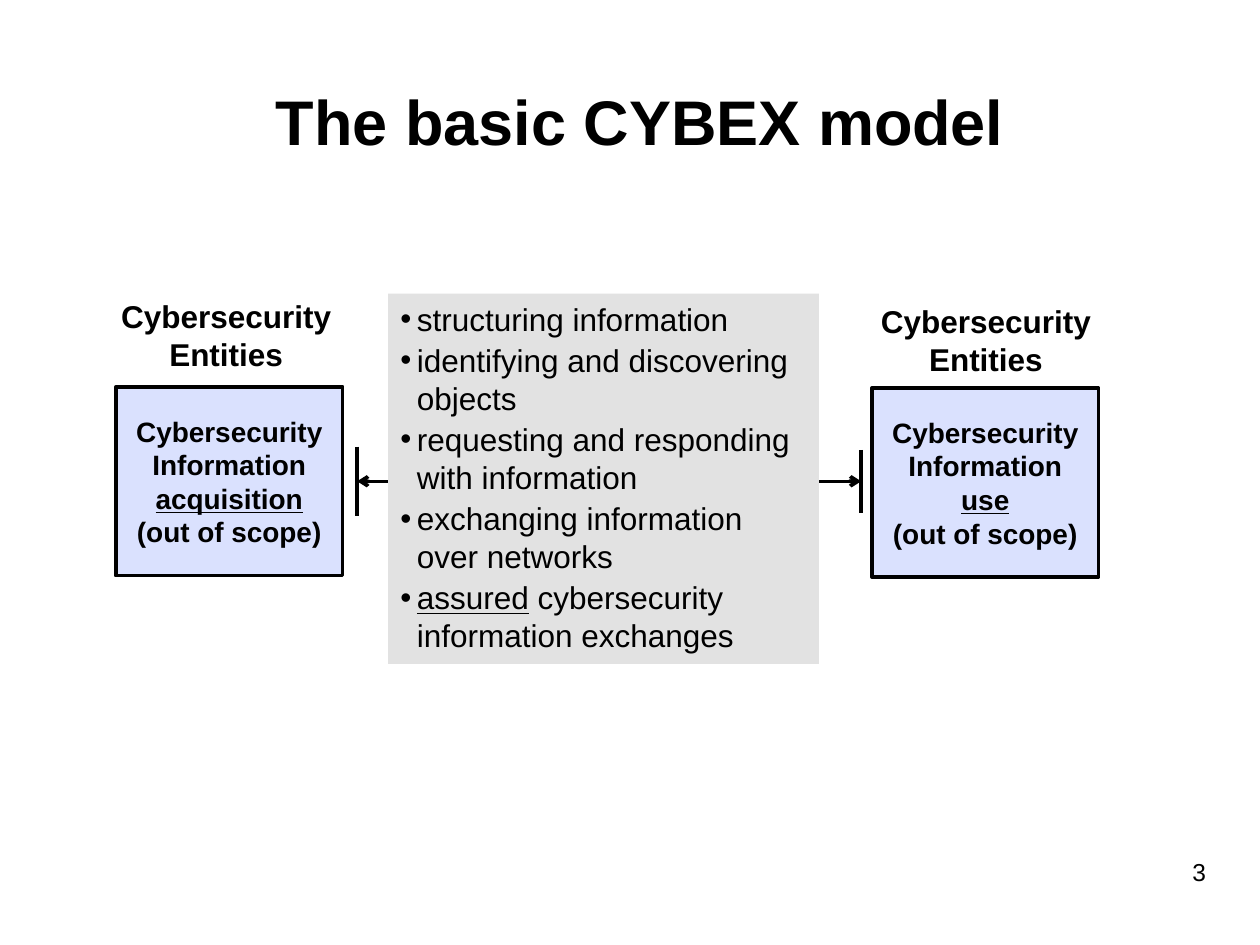
from lxml import etree
from pptx import Presentation
from pptx.dml.color import RGBColor
from pptx.enum import shapes, text
from pptx.oxml.ns import qn
from pptx.util import Inches, Pt

# Grid: 100 columns by 75 rows on a 10 x 7.5 inch slide
COLS, ROWS = 100, 75
WIDTH, HEIGHT = Inches(10), Inches(7.5)
COLORS = {"ink": "000000", "entity": "DAE1FE", "exchange": "E2E2E2"}
FONT = "Arial"
ALIGN, ANCHOR = text.PP_ALIGN, text.MSO_ANCHOR


def rgb(name):
    return RGBColor.from_string(COLORS[name])


def x(cols):
    return round(WIDTH * cols / COLS)


def y(rows):
    return round(HEIGHT * rows / ROWS)


def place(box):
    left, top, width, height = box
    return x(left), y(top), x(width), y(height)


def add_bullet(paragraph, indent):
    props = paragraph._p.get_or_add_pPr()
    props.set("marL", str(indent))
    props.set("indent", str(-indent))
    etree.SubElement(props, qn("a:buFont"), typeface=FONT)
    etree.SubElement(props, qn("a:buChar"), char="•")


def write(shape, paragraphs, size=18, bold=False, align=ALIGN.LEFT,
          anchor=ANCHOR.TOP, wrap=True, bullet_indent=None, gap=0):
    """Fill a shape; words between underscores are underlined."""
    frame = shape.text_frame
    frame.word_wrap = wrap
    frame.vertical_anchor = anchor
    for index, content in enumerate(paragraphs):
        paragraph = frame.add_paragraph() if index else frame.paragraphs[0]
        paragraph.alignment = align
        if index and gap:
            paragraph.space_before = Pt(gap)
        if bullet_indent:
            add_bullet(paragraph, bullet_indent)
        font = paragraph.font
        font.size, font.bold, font.name = Pt(size), bold, FONT
        font.color.rgb = rgb("ink")
        for part, piece in enumerate(content.split("_")):
            for number, line in enumerate(piece.split("\n")):
                if number:
                    paragraph.add_line_break()
                if line:
                    run = paragraph.add_run()
                    run.text = line
                    run.font.size, run.font.bold = Pt(size), bold
                    run.font.name = FONT
                    run.font.color.rgb = rgb("ink")
                    run.font.underline = part % 2 == 1


def add_text(slide, box, paragraphs, **style):
    write(slide.shapes.add_textbox(*place(box)), paragraphs, **style)


def add_panel(slide, box, fill, outlined=False):
    panel = slide.shapes.add_shape(shapes.MSO_SHAPE.RECTANGLE, *place(box))
    panel.shadow.inherit = False
    panel.fill.solid()
    panel.fill.fore_color.rgb = rgb(fill)
    if outlined:
        panel.line.color.rgb = rgb("ink")
        panel.line.width = Pt(2)
    else:
        panel.line.fill.background()
    return panel


def add_line(slide, start, end, arrows=False):
    line = slide.shapes.add_connector(
        shapes.MSO_CONNECTOR.STRAIGHT,
        x(start[0]), y(start[1]), x(end[0]), y(end[1]))
    line.line.color.rgb = rgb("ink")
    line.line.width = Pt(2)
    if arrows:
        outline = line.line._get_or_add_ln()
        for end_tag in ("a:headEnd", "a:tailEnd"):
            etree.SubElement(outline, qn(end_tag), type="arrow")
    etree.SubElement(line._element.spPr, qn("a:effectLst"))


def entity(slide, box, role, label_offset):
    """An outlined card with its heading placed relative to its corner."""
    left, top = box[:2]
    card = add_panel(slide, box, "entity", outlined=True)
    write(card, [f"Cybersecurity\nInformation\n_{role}_\n(out of scope)"],
          size=16, bold=True, align=ALIGN.CENTER, anchor=ANCHOR.MIDDLE)
    label_box = (left + label_offset[0], top + label_offset[1], 19.5, 7.1)
    add_text(slide, label_box, ["Cybersecurity", "Entities"],
             bold=True, align=ALIGN.CENTER, wrap=False)


def link(slide, box, bar_heights):
    """A two-way arrow stopped by an upright bar at each end."""
    left, top, width, height = box
    middle = top + height / 2
    add_line(slide, (left, middle), (left + width, middle), arrows=True)
    for column, bar in zip((left, left + width), bar_heights):
        add_line(slide, (column, middle - bar / 2), (column, middle + bar / 2))


def exchange(slide, box):
    panel = add_panel(slide, box, "exchange")
    write(panel, [
        "structuring information",
        "identifying and discovering objects",
        "requesting and responding with information",
        "exchanging information over networks",
        "_assured_ cybersecurity information exchanges",
    ], bullet_indent=x(1.3), gap=2)


def main():
    deck = Presentation()
    deck.slide_width, deck.slide_height = WIDTH, HEIGHT
    slide = deck.slides.add_slide(deck.slide_layouts[6])

    # Entities on both sides
    entity(slide, (9.2, 30.7, 18, 15), "acquisition", (-1, -7.6))
    entity(slide, (69.2, 30.8, 18, 15), "use", (-0.7, -7.3))

    # Arrow runs behind the exchange panel
    link(slide, (28.35, 35.5, 40, 5.4), (5.5, 5))

    # Title
    add_text(slide, (5.8, 3.3, 90, 12.5), ["The basic CYBEX model"],
             size=36, bold=True, align=ALIGN.CENTER, anchor=ANCHOR.MIDDLE)

    # Exchange functions
    exchange(slide, (30.8, 23.3, 34.2, 29.4))

    # Slide number
    add_text(slide, (71.7, 67.5, 25, 5.2), ["3"], size=14, align=ALIGN.RIGHT)

    deck.save("out.pptx")


if __name__ == "__main__":
    main()
